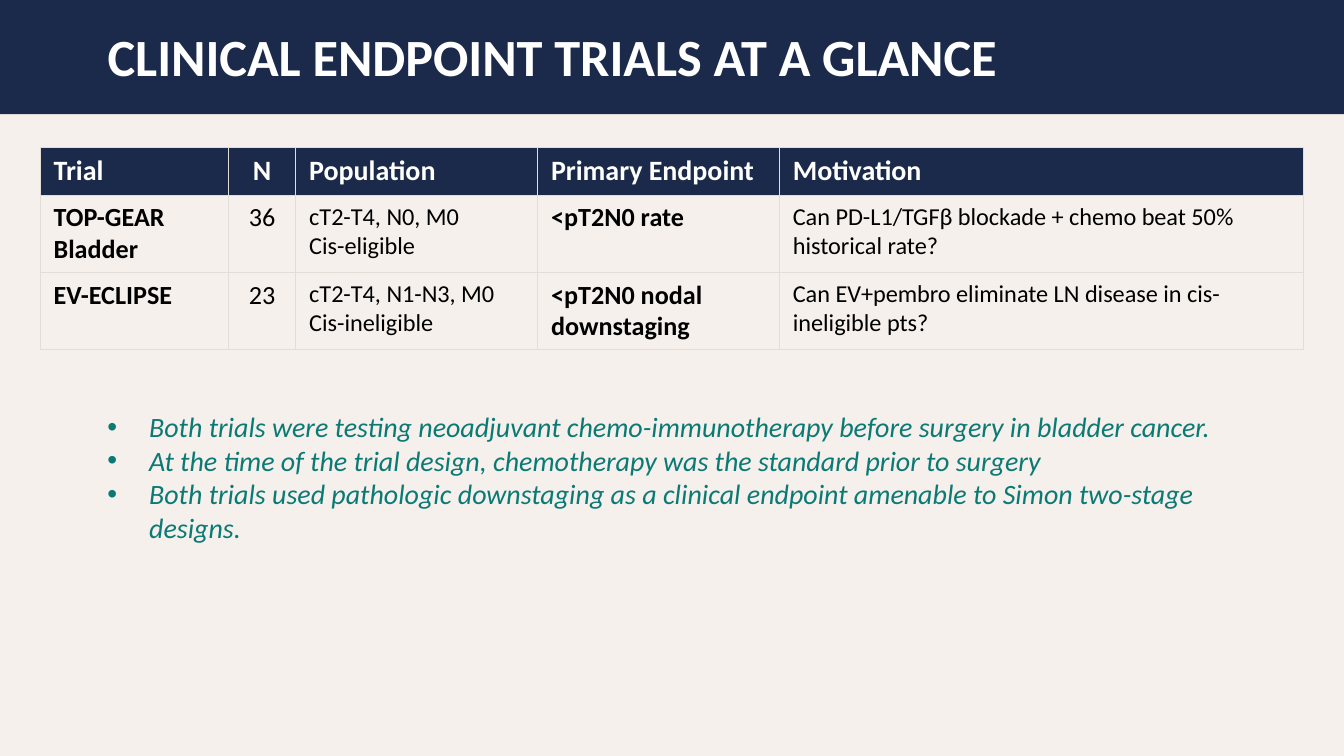
from lxml.etree import SubElement
from pptx import Presentation
from pptx.dml.color import RGBColor
from pptx.enum.shapes import MSO_SHAPE as Shape
from pptx.enum.text import MSO_ANCHOR as Anchor, MSO_AUTO_SIZE as AutoSize, PP_ALIGN as Align
from pptx.oxml.ns import qn
from pptx.util import Cm, Pt

FONT = "Calibri"
NAVY, TEAL, CREAM = "1B2A4A", "0B7A75", "F5F0EB"
WHITE, BLACK, BORDER = "FFFFFF", "000000", "E2DDD7"

SLIDE_WIDTH, SLIDE_HEIGHT = Cm(25.4), Cm(14.29)
TEXT_LEFT, TEXT_WIDTH = Cm(1.78), Cm(21.84)
COLUMN_WIDTHS = [3.56, 1.27, 4.57, 4.57, 9.91]
ROW_HEIGHTS = [0.89, 1.46, 1.46]
COLUMN_STYLES = [(14, True), (14, False), (13, False), (14, True), (13, False)]
CENTERED_COLUMN = 1

TRIALS = [
    ["Trial", "N", "Population", "Primary Endpoint", "Motivation"],
    ["TOP-GEAR\nBladder", "36", "cT2-T4, N0, M0\nCis-eligible", "<pT2N0 rate",
     "Can PD-L1/TGFβ blockade + chemo beat 50% historical rate?"],
    ["EV-ECLIPSE", "23", "cT2-T4, N1-N3, M0\nCis-ineligible", "<pT2N0 nodal\ndownstaging",
     "Can EV+pembro eliminate LN disease in cis-ineligible pts?"],
]
NOTES = [
    "Both trials were testing neoadjuvant chemo-immunotherapy before surgery in bladder cancer.",
    "At the time of the trial design, chemotherapy was the standard prior to surgery",
    "Both trials used pathologic downstaging as a clinical endpoint amenable to Simon two-stage designs.",
]


def color(value):
    return RGBColor.from_string(value)


def set_fill(fill, value):
    fill.solid()
    fill.fore_color.rgb = color(value)


def add_bullet(paragraph):
    properties = paragraph._p.get_or_add_pPr()
    properties.set("marL", str(Cm(0.79)))
    properties.set("indent", str(-Cm(0.79)))
    SubElement(properties, qn("a:buFont"), typeface="Arial")
    SubElement(properties, qn("a:buChar"), char="•")


def write_lines(frame, lines, size, text_color, bold=False, italic=False,
                alignment=Align.LEFT, bullets=False):
    for index, line in enumerate(lines):
        paragraph = frame.paragraphs[0] if index == 0 else frame.add_paragraph()
        paragraph.alignment = alignment
        if bullets:
            add_bullet(paragraph)
        run = paragraph.add_run()
        run.text = line
        font = run.font
        font.name, font.size = FONT, Pt(size)
        font.bold, font.italic = bold, italic
        font.color.rgb = color(text_color)


def add_header(slide, text):
    band = slide.shapes.add_shape(Shape.RECTANGLE, 0, 0, SLIDE_WIDTH, Cm(2.16))
    band.shadow.inherit = False
    set_fill(band.fill, NAVY)
    band.line.fill.background()
    title = slide.shapes.title
    title._element.addprevious(band._element)
    title.left, title.top = TEXT_LEFT, Cm(0.3)
    title.width, title.height = TEXT_WIDTH, Cm(1.52)
    frame = title.text_frame
    frame.auto_size = AutoSize.NONE
    frame.vertical_anchor = Anchor.MIDDLE
    write_lines(frame, [text], 28, WHITE, bold=True)


def set_borders(cell):
    properties = cell._tc.get_or_add_tcPr()
    for side in ("lnL", "lnR", "lnT", "lnB"):
        line = SubElement(properties, qn(f"a:{side}"), w=str(Pt(0.5)))
        fill = SubElement(line, qn("a:solidFill"))
        SubElement(fill, qn("a:srgbClr"), val=BORDER)


def add_trial_table(slide):
    shape = slide.shapes.add_table(
        len(TRIALS), len(COLUMN_WIDTHS), Cm(0.76), Cm(2.79),
        Cm(sum(COLUMN_WIDTHS)), Cm(sum(ROW_HEIGHTS)))
    table = shape.table
    table.horz_banding = False
    for column, width in zip(table.columns, COLUMN_WIDTHS):
        column.width = Cm(width)
    for row_index, texts in enumerate(TRIALS):
        table.rows[row_index].height = Cm(ROW_HEIGHTS[row_index])
        for column_index, text in enumerate(texts):
            cell = table.cell(row_index, column_index)
            set_borders(cell)
            if row_index == 0:
                set_fill(cell.fill, NAVY)
                size, bold, text_color = 15, True, WHITE
            else:
                cell.fill.background()
                size, bold = COLUMN_STYLES[column_index]
                text_color = BLACK
            alignment = Align.CENTER if column_index == CENTERED_COLUMN else Align.LEFT
            write_lines(cell.text_frame, text.split("\n"), size, text_color,
                        bold=bold, alignment=alignment)


def add_notes(slide):
    box = slide.shapes.add_textbox(TEXT_LEFT, Cm(8.38), TEXT_WIDTH, Cm(1.27))
    frame = box.text_frame
    frame.word_wrap = True
    frame.vertical_anchor = Anchor.MIDDLE
    write_lines(frame, NOTES, 15, TEAL, italic=True, bullets=True)


def main():
    presentation = Presentation()
    presentation.slide_width, presentation.slide_height = SLIDE_WIDTH, SLIDE_HEIGHT
    slide = presentation.slides.add_slide(presentation.slide_layouts[5])
    set_fill(slide.background.fill, CREAM)
    add_header(slide, "CLINICAL ENDPOINT TRIALS AT A GLANCE")
    add_trial_table(slide)
    add_notes(slide)
    presentation.save("out.pptx")


if __name__ == "__main__":
    main()
